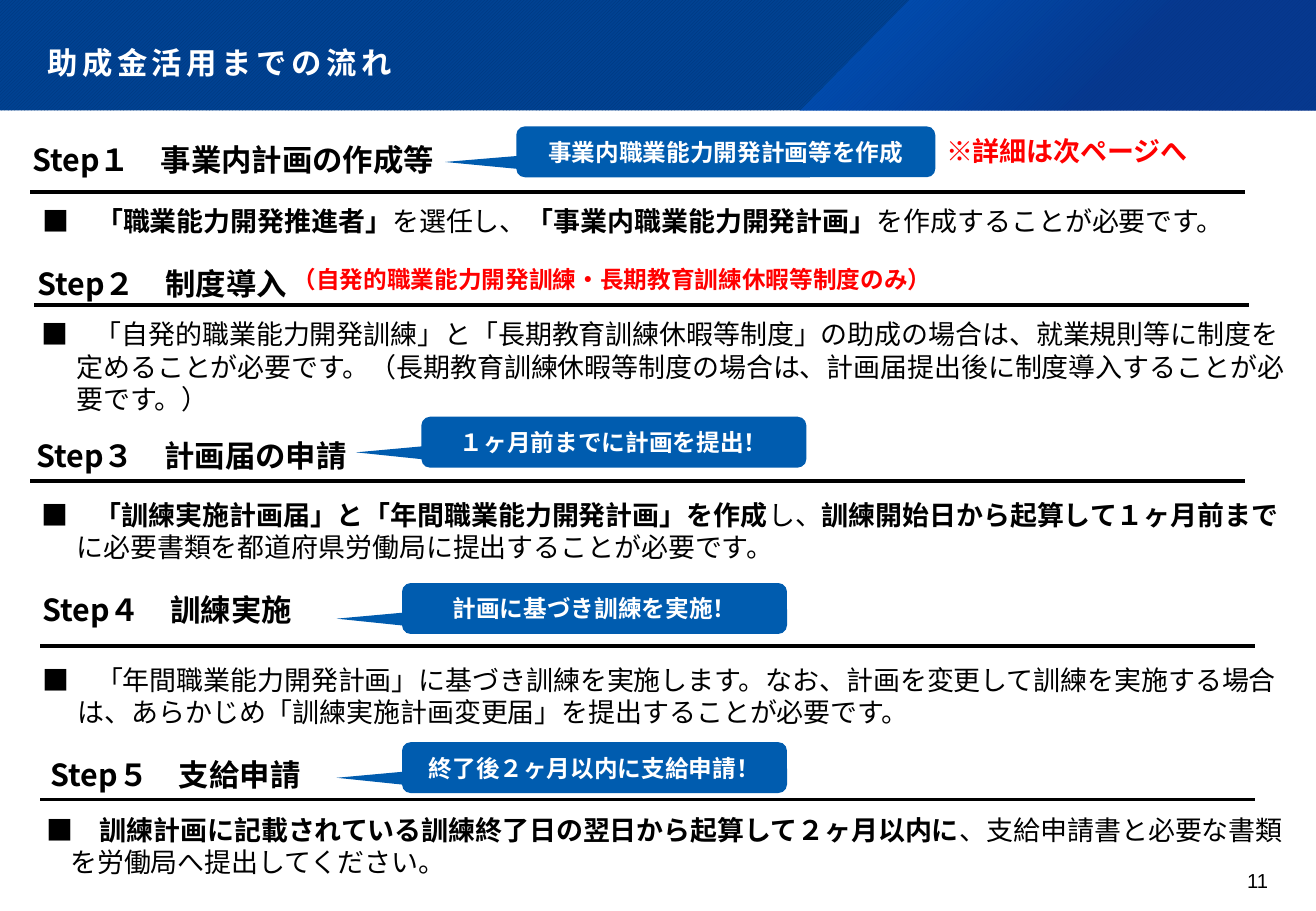
"""Builds the five-step subsidy flow slide."""
from lxml import etree
from pptx import Presentation
from pptx.dml.color import RGBColor
from pptx.enum.dml import MSO_PATTERN
from pptx.enum.shapes import MSO_CONNECTOR, MSO_SHAPE
from pptx.enum.text import MSO_ANCHOR, MSO_AUTO_SIZE, PP_ALIGN
from pptx.oxml import parse_xml
from pptx.oxml.ns import nsdecls, qn
from pptx.util import Pt

COLORS = {
    "text": "000000", "white": "FFFFFF", "red": "FF0000", "callout": "005CAF",
    "stripe": "003579", "band": "004292", "glow": "0064DF", "deep": "0C338E",
}
FONT = "Noto Sans CJK JP"


def rgb(name):
    return RGBColor.from_string(COLORS[name])


def write(shape, text, size, color="text", bold=False, font=FONT,
          align=PP_ALIGN.LEFT, anchor=MSO_ANCHOR.MIDDLE, insets=(7.2, 3.6, 7.2, 3.6)):
    """Fill a shape with one paragraph; asterisks switch bold on and off."""
    tf = shape.text_frame
    tf.word_wrap = True
    tf.auto_size = MSO_AUTO_SIZE.NONE
    tf.vertical_anchor = anchor
    tf.margin_left, tf.margin_top, tf.margin_right, tf.margin_bottom = map(Pt, insets)
    p = tf.paragraphs[0]
    p.alignment = align
    p.font.size = Pt(size)
    p.font.name = font
    p.font.color.rgb = rgb(color)
    ea = etree.SubElement(p.font._element, qn("a:ea"))
    ea.set("typeface", FONT)
    for i, part in enumerate(text.split("*")):
        if part:
            r = p.add_run()
            r.text = part
            r.font.bold = bold or i % 2 == 1
    return p


prs = Presentation()
prs.slide_width, prs.slide_height = Pt(780), Pt(540)
s = prs.slides.add_slide(prs.slide_layouts[5])

band = s.shapes.add_shape(MSO_SHAPE.RECTANGLE, 0, 0, Pt(780), Pt(65.5))
band.shadow.inherit = False
band.fill.patterned()
band.fill.pattern = MSO_PATTERN.DARK_UPWARD_DIAGONAL
band.fill.fore_color.rgb = rgb("stripe")
band.fill.back_color.rgb = rgb("band")
band.line.fill.background()

builder = s.shapes.build_freeform(Pt(539.3), Pt(0))
builder.add_line_segments(
    [(Pt(x), Pt(y)) for x, y in [(780, 0), (780, 65.5), (473.8, 65.5)]], close=True)
slant = builder.convert_to_shape()
slant.shadow.inherit = False
slant.line.fill.background()
stops = "".join(
    f'<a:gs pos="{pos}000"><a:srgbClr val="{COLORS[name]}"><a:alpha val="{alpha}000"/></a:srgbClr></a:gs>'
    for pos, name, alpha in [(0, "glow", 50), (62, "deep", 55)])
slant._element.spPr.find(qn("a:custGeom")).addnext(parse_xml(
    f'<a:gradFill {nsdecls("a")}><a:gsLst>{stops}</a:gsLst><a:path path="circle">'
    '<a:fillToRect r="100000" b="100000"/></a:path></a:gradFill>'))

title = s.shapes.title
s.shapes._spTree.append(title._element)
title.left, title.top, title.width, title.height = Pt(0), Pt(12.2), Pt(780), Pt(46)
p = write(title, "助成金活用までの流れ", 18, "white", True, "Roboto",
          anchor=MSO_ANCHOR.BOTTOM, insets=(28, 26, 26, 10))
p.line_spacing = 0.9
p.font._element.set("spc", "270")

steps = [
    ("Step１　事業内計画の作成等", (12.2, 80.6, 28), (18, 113.8),
     "■　*「職業能力開発推進者」*を選任し、*「事業内職業能力開発計画」*を作成することが必要です。",
     (18, 113.8, 34.6), 0),
    ("Step２　制度導入", (15.1, 155.5, 25.2), (20.2, 180.7),
     "■　「自発的職業能力開発訓練」と「長期教育訓練休暇等制度」の助成の場合は、就業規則等に制度を"
     "定めることが必要です。（長期教育訓練休暇等制度の場合は、計画届提出後に制度導入することが必要です。）",
     (17.3, 188.6, 57), 21),
    ("Step３　計画届の申請", (14.4, 247.7, 44), (18, 285.1),
     "■　*「訓練実施計画届」と「年間職業能力開発計画」を作成*し、*訓練開始日から起算して１ヶ月前まで*"
     "に必要書類を都道府県労働局に提出することが必要です。",
     (17.3, 290.9, 47.5), 21),
    ("Step４　訓練実施", (18, 339.1, 44), (23.8, 383),
     "■　「年間職業能力開発計画」に基づき訓練を実施します。なお、計画を変更して訓練を実施する場合は、"
     "あらかじめ「訓練実施計画変更届」を提出することが必要です。",
     (18, 388.8, 47.5), 21),
    ("Step５　支給申請", (23, 437, 44), (23.8, 473.8),
     "■　*訓練計画に記載されている訓練終了日の翌日から起算して２ヶ月以内に*、"
     "支給申請書と必要な書類を労働局へ提出してください。",
     (20.2, 477.4, 47.5), 14.4),
]
for heading, (hx, hy, hh), (lx, ly), body, (bx, by, bh), hang in steps:
    write(s.shapes.add_textbox(Pt(hx), Pt(hy), Pt(365.8), Pt(hh)), heading, 18, bold=True)
    rule = s.shapes.add_connector(MSO_CONNECTOR.STRAIGHT, Pt(lx), Pt(ly), Pt(lx + 720), Pt(ly))
    rule.line.color.rgb = rgb("text")
    rule.line.width = Pt(2)
    etree.SubElement(rule._element.spPr, qn("a:effectLst"))
    p = write(s.shapes.add_textbox(Pt(bx), Pt(by), Pt(753), Pt(bh)), body, 16)
    pPr = p._p.get_or_add_pPr()
    pPr.set("marL", str(Pt(hang)))
    pPr.set("indent", str(-Pt(hang)))

callouts = [
    ("事業内職業能力開発計画等を作成", 306, 74.9, 248.4),
    ("１ヶ月前までに計画を提出！", 249.8, 247, 228.2),
    ("計画に基づき訓練を実施！", 238.3, 345.6, 228.2),
    ("終了後２ヶ月以内に支給申請！", 238.3, 439.9, 228.2),
]
for text, x, y, w in callouts:
    sp = s.shapes.add_shape(MSO_SHAPE.ROUNDED_RECTANGULAR_CALLOUT, Pt(x), Pt(y), Pt(w), Pt(30.2))
    sp.shadow.inherit = False
    for i, value in enumerate((-0.67, 0.2, 0.17)):
        sp.adjustments[i] = value
    sp.fill.solid()
    sp.fill.fore_color.rgb = rgb("callout")
    sp.line.fill.background()
    write(sp, text, 14, "white", True, align=PP_ALIGN.CENTER)

notes = [
    ("※詳細は次ページへ", 16, 553.7, 75.6, 216),
    ("（自発的職業能力開発訓練・長期教育訓練休暇等制度のみ）", 14, 166.3, 151.2, 398.9),
]
for text, size, x, y, w in notes:
    write(s.shapes.add_textbox(Pt(x), Pt(y), Pt(w), Pt(28)), text, size, "red", True)

write(s.shapes.add_textbox(Pt(702), Pt(514.8), Pt(49.7), Pt(21.6)), "11", 12, font="Arial",
      align=PP_ALIGN.RIGHT, anchor=MSO_ANCHOR.TOP, insets=(0, 0, 0, 0))

prs.save("out.pptx")
